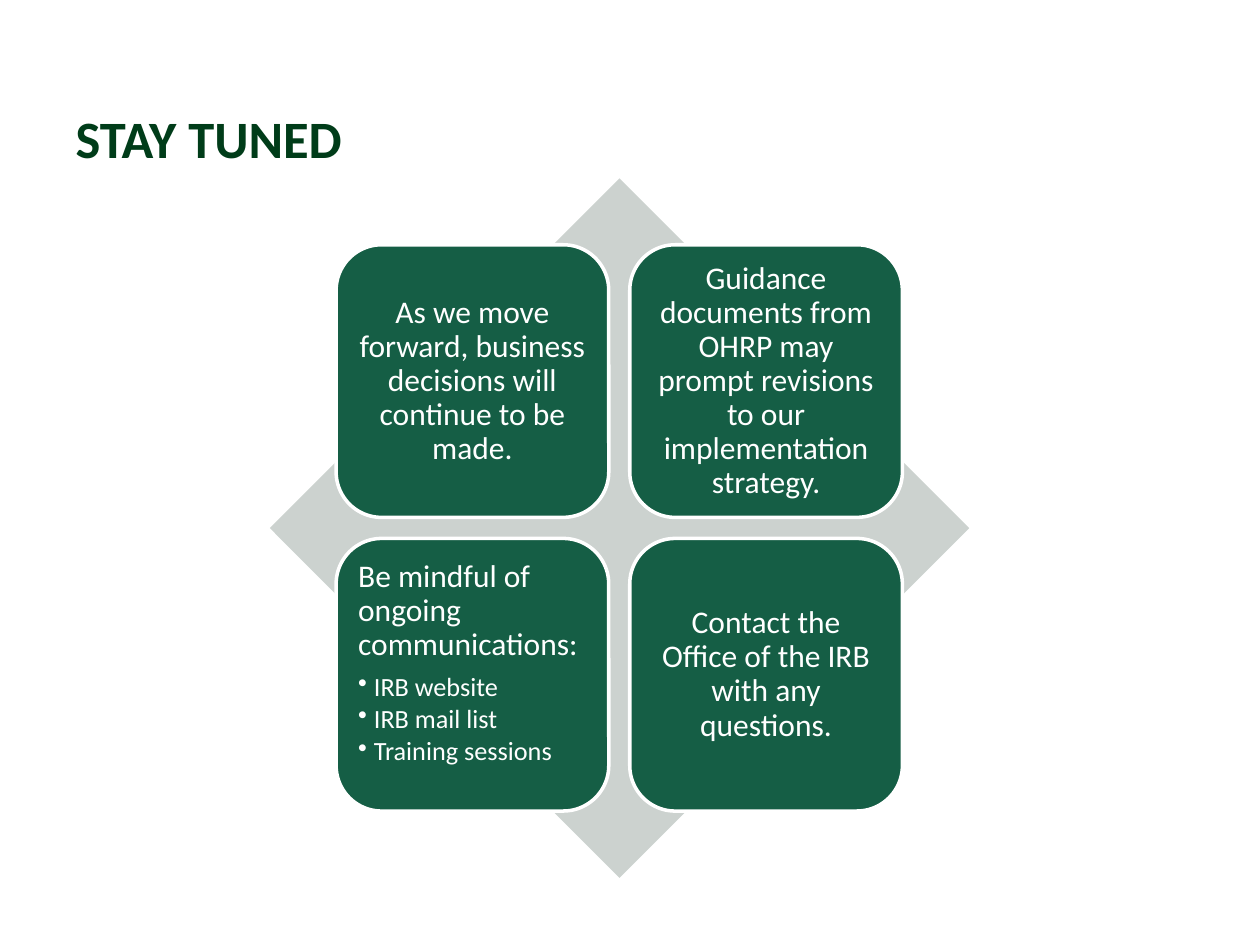
from lxml import etree
from pptx import Presentation
from pptx.dml.color import RGBColor
from pptx.enum.shapes import MSO_SHAPE
from pptx.enum.text import MSO_ANCHOR, PP_ALIGN
from pptx.oxml.ns import qn
from pptx.util import Pt

DIAMOND = MSO_SHAPE.DIAMOND
ROUNDED = MSO_SHAPE.ROUNDED_RECTANGLE
LEFT, CENTER = PP_ALIGN.LEFT, PP_ALIGN.CENTER
TOP, MIDDLE = MSO_ANCHOR.TOP, MSO_ANCHOR.MIDDLE

COLORS = {"title": "003C19", "diamond": "CCD2CF", "tile": "155E45", "white": "FFFFFF"}
FONT = "Calibri"
TILE_LEFT, TILE_TOP, TILE_SIZE, TILE_PITCH = 192.1, 139.9, 155.8, 167.8
TILES = [
    ("As we move forward, business decisions will continue to be made.", []),
    ("Guidance documents from OHRP may prompt revisions to our "
     "implementation strategy.", []),
    ("Be mindful of ongoing communications:",
     ["IRB website", "IRB mail list", "Training sessions"]),
    ("Contact the Office of the IRB with any questions.", []),
]


def color(name):
    return RGBColor.from_string(COLORS[name])


def style_font(para, size, color_name, bold=False):
    para.font.name = FONT
    para.font.size = Pt(size)
    para.font.bold = bold
    para.font.color.rgb = color(color_name)


def add_bullet(para):
    properties = para._p.get_or_add_pPr()
    properties.set("marL", str(Pt(9)))
    properties.set("indent", str(-Pt(9)))
    etree.SubElement(properties, qn("a:buChar")).set("char", "•")


def write_line(para, text, size, space_after, align):
    para.text = text
    para.alignment = align
    para.line_spacing = 0.9
    para.space_after = Pt(space_after)
    style_font(para, size, "white")


def add_title(page, text):
    title = page.shapes.title
    title.left, title.top, title.width, title.height = Pt(36), Pt(57), Pt(648), Pt(77)
    frame = title.text_frame
    frame.text = text
    frame.vertical_anchor = TOP
    para = frame.paragraphs[0]
    para.alignment = LEFT
    style_font(para, 30, "title", bold=True)


def add_filled_shape(page, kind, left, top, size, fill):
    shape = page.shapes.add_shape(kind, Pt(left), Pt(top), Pt(size), Pt(size))
    shape.shadow.inherit = False
    shape.fill.solid()
    shape.fill.fore_color.rgb = color(fill)
    shape.line.fill.background()
    return shape


def add_tile(page, left, top, heading, items):
    tile = add_filled_shape(page, ROUNDED, left, top, TILE_SIZE, "tile")
    tile.line.color.rgb = color("white")
    tile.line.width = Pt(2)
    frame = tile.text_frame
    frame.word_wrap = True
    frame.margin_left = frame.margin_right = Pt(5)
    frame.margin_top = frame.margin_bottom = Pt(5)
    frame.vertical_anchor = TOP if items else MIDDLE
    write_line(frame.paragraphs[0], heading, 18, 6.3, LEFT if items else CENTER)
    for item in items:
        para = frame.add_paragraph()
        para.level = 1
        add_bullet(para)
        write_line(para, item, 15, 2.25, LEFT)


def main():
    deck = Presentation()
    deck.slide_width, deck.slide_height = Pt(720), Pt(540)
    page = deck.slides.add_slide(deck.slide_layouts[5])
    add_title(page, "STAY TUNED")
    add_filled_shape(page, DIAMOND, 154.2, 102, 399.6, "diamond")
    for index, (heading, items) in enumerate(TILES):
        row, column = divmod(index, 2)
        add_tile(page, TILE_LEFT + column * TILE_PITCH,
                 TILE_TOP + row * TILE_PITCH, heading, items)
    deck.save("out.pptx")


if __name__ == "__main__":
    main()
